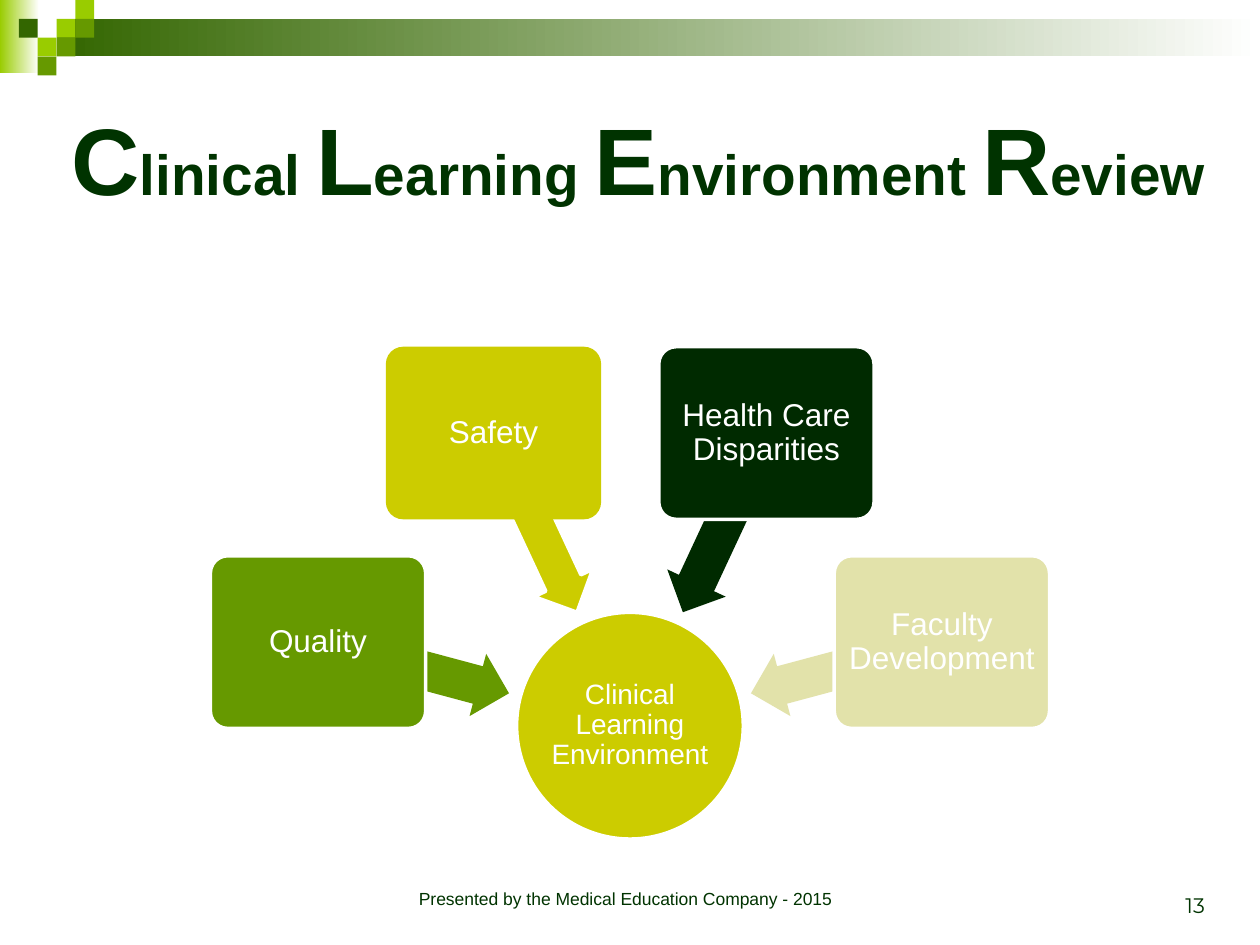
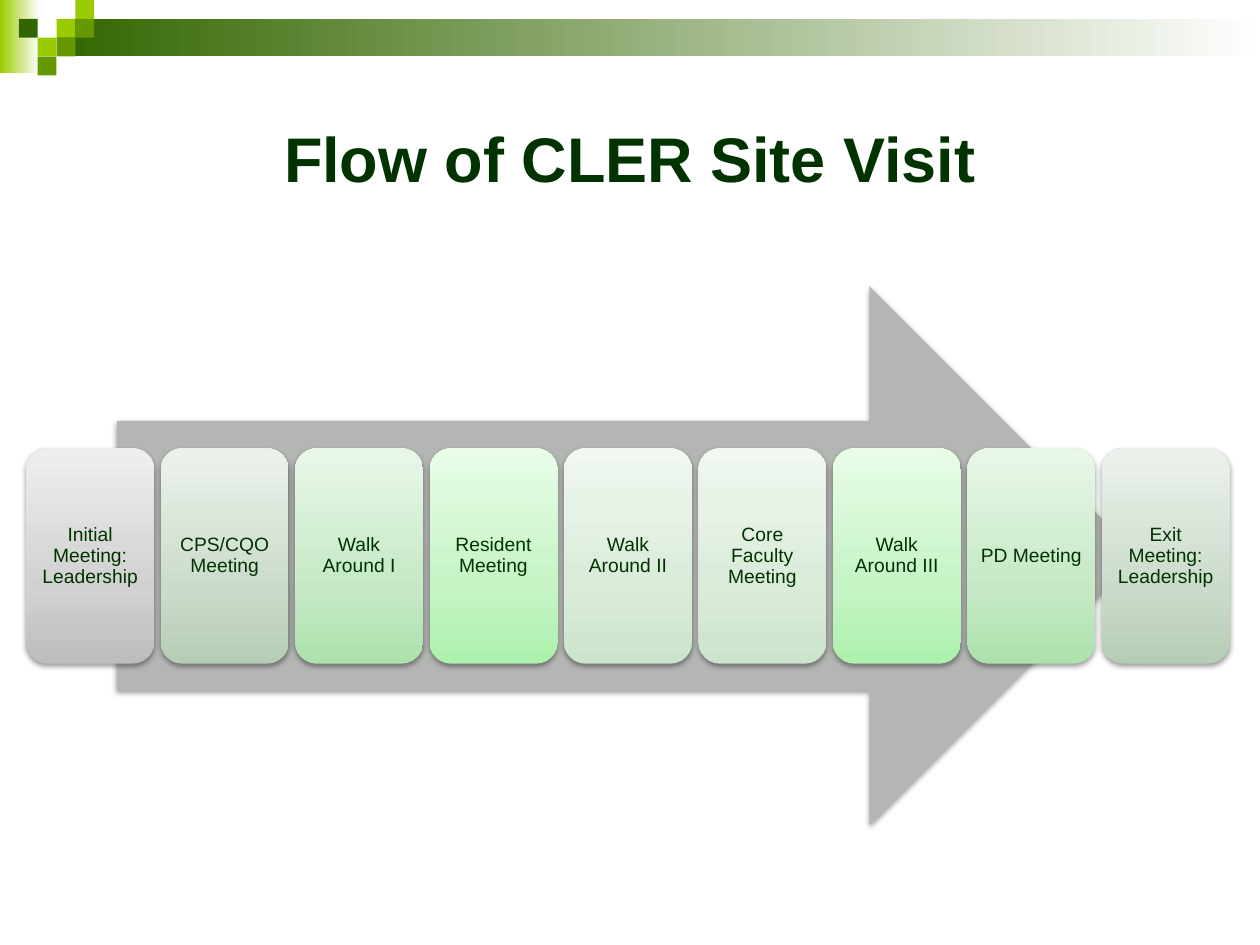
import math
from dataclasses import dataclass
from typing import NamedTuple, Optional

import lxml.etree
import pptx
import pptx.dml.color
import pptx.enum.shapes
import pptx.enum.text
import pptx.oxml.ns
import pptx.shapes.autoshape
import pptx.slide
import pptx.text.text
import pptx.util

Cm = pptx.util.Cm
Pt = pptx.util.Pt
Kind = pptx.enum.shapes.MSO_SHAPE
Align = pptx.enum.text.PP_ALIGN
Anchor = pptx.enum.text.MSO_ANCHOR
qn = pptx.oxml.ns.qn


@dataclass(frozen=True)
class Theme:
    font: str = "Arial"
    digit: str = "Montserrat"
    ink: str = "003300"
    white: str = "FFFFFF"
    lime: str = "99CC00"
    leaf: str = "669900"
    moss: str = "336600"
    gold: str = "CCCC00"
    pine: str = "002A00"
    cream: str = "E2E2AA"
    gray: str = "B4B6B4"
    ash: tuple = ("BCBEBC", "D0D1D0", "EDEEED")
    sage: tuple = ("B5CCB5", "CBDBCB", "EBF2EB")
    fern: tuple = ("ACE2AC", "C5E9C5", "E9F7E9")
    mint: tuple = ("ACF1AC", "C5F4C5", "E8FCE8")
    mist: tuple = ("CCE4CC", "DAEBDA", "F0F8F0")
    cap: float = 54
    word: float = 32.4
    head: float = 36
    box: float = 18
    hub: float = 16
    page: float = 12
    tile: float = 11
    foot: float = 10


T = Theme()


class Rect(NamedTuple):
    left: float
    top: float
    width: float
    height: float


class Cell(NamedTuple):
    col: int
    row: int
    color: str


class Topic(NamedTuple):
    text: str
    color: str
    angle: int
    rim_box: bool = True
    rim_arrow: bool = False


class Step(NamedTuple):
    text: str
    shades: tuple


UNIT = 0.38
CELLS = [
    Cell(3, 1, T.lime),
    Cell(4, 0, T.lime),
    Cell(4, 1, T.leaf),
    Cell(2, 2, T.lime),
    Cell(1, 1, T.moss),
    Cell(3, 2, T.leaf),
    Cell(2, 3, T.leaf),
]
TOPICS = [
    Topic("Quality", T.leaf, 195),
    Topic("Safety", T.gold, 245, False, True),
    Topic("Health Care Disparities", T.pine, 295),
    Topic("Faculty Development", T.cream, 345),
]
STEPS = [
    Step("Initial Meeting: Leadership", T.ash),
    Step("CPS/CQO Meeting", T.sage),
    Step("Walk Around I", T.fern),
    Step("Resident Meeting", T.mint),
    Step("Walk Around II", T.mist),
    Step("Core Faculty Meeting", T.mist),
    Step("Walk Around III", T.mint),
    Step("PD Meeting", T.fern),
    Step("Exit Meeting: Leadership", T.sage),
]


def rgb(code: str) -> pptx.dml.color.RGBColor:
    return pptx.dml.color.RGBColor.from_string(code)


def style(run: pptx.text.text._Run, size: float, color: str, font: str = T.font,
          bold: bool = False) -> None:
    run.font.name = font
    run.font.size = Pt(size)
    run.font.bold = bold
    run.font.color.rgb = rgb(color)


def shade(shape: pptx.shapes.autoshape.Shape, stops: list, angle: int) -> None:
    shape.fill.gradient()
    shape.fill.gradient_angle = angle
    chain = shape.element.spPr.find(".//" + qn("a:gsLst"))
    for old in list(chain):
        chain.remove(old)
    for place, color in stops:
        stop = lxml.etree.SubElement(chain, qn("a:gs"), pos=str(place * 1000))
        lxml.etree.SubElement(stop, qn("a:srgbClr"), val=color)


def draw(slide: pptx.slide.Slide, kind: Kind, rect: Rect, color: Optional[str] = None,
         rim: bool = False) -> pptx.shapes.autoshape.Shape:
    shape = slide.shapes.add_shape(kind, *map(Cm, rect))
    shape.shadow.inherit = False
    if color:
        shape.fill.solid()
        shape.fill.fore_color.rgb = rgb(color)
    if rim:
        shape.line.color.rgb = rgb(T.white)
        shape.line.width = Pt(2)
    else:
        shape.line.fill.background()
    return shape


def label(shape: pptx.shapes.autoshape.Shape, text: str, size: float, color: str,
          inset: float) -> None:
    frame = shape.text_frame
    frame.text = text
    frame.word_wrap = True
    frame.vertical_anchor = Anchor.MIDDLE
    frame.margin_left = frame.margin_right = Cm(inset)
    frame.margin_top = frame.margin_bottom = Cm(inset)
    line = frame.paragraphs[0]
    line.alignment = Align.CENTER
    line.line_spacing = 0.9
    style(line.runs[0], size, color)


def drop(shape: pptx.shapes.autoshape.Shape) -> None:
    glow = shape.element.spPr.find(qn("a:effectLst"))
    outer = lxml.etree.SubElement(
        glow, qn("a:outerShdw"), blurRad=str(Pt(3.1)), dist=str(Pt(1.6)),
        dir="5400000", rotWithShape="0")
    black = lxml.etree.SubElement(outer, qn("a:srgbClr"), val="000000")
    lxml.etree.SubElement(black, qn("a:alpha"), val="38000")


def note(slide: pptx.slide.Slide, rect: Rect, text: str, size: float, font: str,
         align: Align, anchor: Anchor) -> None:
    frame = slide.shapes.add_textbox(*map(Cm, rect)).text_frame
    frame.text = text
    frame.word_wrap = True
    frame.vertical_anchor = anchor
    frame.paragraphs[0].alignment = align
    style(frame.paragraphs[0].runs[0], size, T.ink, font)


def title(slide: pptx.slide.Slide, rect: Rect, text: str) -> pptx.text.text._Paragraph:
    shape = slide.shapes.title
    shape.left, shape.top, shape.width, shape.height = map(Cm, rect)
    frame = shape.text_frame
    frame.text = text
    frame.word_wrap = True
    frame.auto_size = pptx.enum.text.MSO_AUTO_SIZE.NONE
    frame.vertical_anchor = Anchor.MIDDLE
    line = frame.paragraphs[0]
    line.alignment = Align.CENTER
    style(line.runs[0], T.head, T.ink, bold=True)
    return line


def band(slide: pptx.slide.Slide, master: pptx.slide.SlideMaster) -> None:
    side = draw(slide, Kind.RECTANGLE, Rect(0, 0, 0.79, 1.47))
    shade(side, [(0, T.lime), (100, T.white)], 0)
    bar = draw(slide, Kind.RECTANGLE, Rect(3 * UNIT, UNIT, 25.4 - 3 * UNIT, 2 * UNIT))
    shade(bar, [(0, T.moss), (100, T.white)], 0)
    parts = [side, bar]
    for cell in CELLS:
        rect = Rect(cell.col * UNIT, cell.row * UNIT, UNIT, UNIT)
        parts.append(draw(slide, Kind.RECTANGLE, rect, cell.color))
    for index, part in enumerate(parts):
        part.element.nvSpPr.cNvPr.set("id", str(100 + index))
        master.element.cSld.spTree.append(part.element)


def around(angle: int, reach: float, width: float, height: float) -> Rect:
    turn = math.radians(angle)
    return Rect(12.7 + reach * math.cos(turn) - width / 2,
                14.63 + reach * math.sin(turn) - height / 2, width, height)


def review(slide: pptx.slide.Slide) -> None:
    line = title(slide, Rect(0.99, 1.27, 23.75, 3.81), "Clinical Learning Environment Review")
    words = line.text.split()
    line.text = ""
    for index, word in enumerate(words):
        gap = " " if index < len(words) - 1 else ""
        for text, size in ((word[0], T.cap), (word[1:] + gap, T.word)):
            run = line.add_run()
            run.text = text
            style(run, size, T.ink, bold=True)

    hub = draw(slide, Kind.OVAL, around(0, 0, 4.57, 4.57), T.gold, True)
    label(hub, "Clinical Learning Environment", T.hub, T.white, 0.03)
    for topic in TOPICS:
        arrow = draw(slide, Kind.LEFT_ARROW, around(topic.angle, 4.52, 3.99, 1.3),
                     topic.color, topic.rim_arrow)
        arrow.adjustments[0] = 0.6
        arrow.rotation = topic.angle
        box = draw(slide, Kind.ROUNDED_RECTANGLE, around(topic.angle, 6.51, 4.34, 3.48),
                   topic.color, topic.rim_box)
        box.adjustments[0] = 0.1
        label(box, topic.text, T.box, T.white, 0.1)

    note(slide, Rect(6.99, 17.78, 11.23, 0.84),
         "Presented by the Medical Education Company - 2015",
         T.foot, T.font, Align.CENTER, Anchor.TOP)
    note(slide, Rect(18.62, 17.35, 5.92, 1.27), "13",
         T.page, T.digit, Align.RIGHT, Anchor.BOTTOM)


def visit(slide: pptx.slide.Slide) -> None:
    title(slide, Rect(1.27, 1.27, 22.86, 3.81), "Flow of CLER Site Visit")
    drop(draw(slide, Kind.RIGHT_ARROW, Rect(2.36, 5.77, 20.6, 10.87), T.gray))
    for index, step in enumerate(STEPS):
        tile = draw(slide, Kind.ROUNDED_RECTANGLE,
                    Rect(0.53 + index * 2.71, 9.04, 2.58, 4.34))
        shade(tile, list(zip((0, 35, 100), step.shades)), 90)
        drop(tile)
        label(tile, step.text, T.tile, T.ink, 0.13)


def main() -> None:
    deck = pptx.Presentation()
    deck.slide_width, deck.slide_height = Cm(25.4), Cm(19.05)
    first, second = (deck.slides.add_slide(deck.slide_layouts[5]) for _ in range(2))
    band(first, deck.slide_master)
    review(first)
    visit(second)
    deck.save("out.pptx")


if __name__ == "__main__":
    main()
